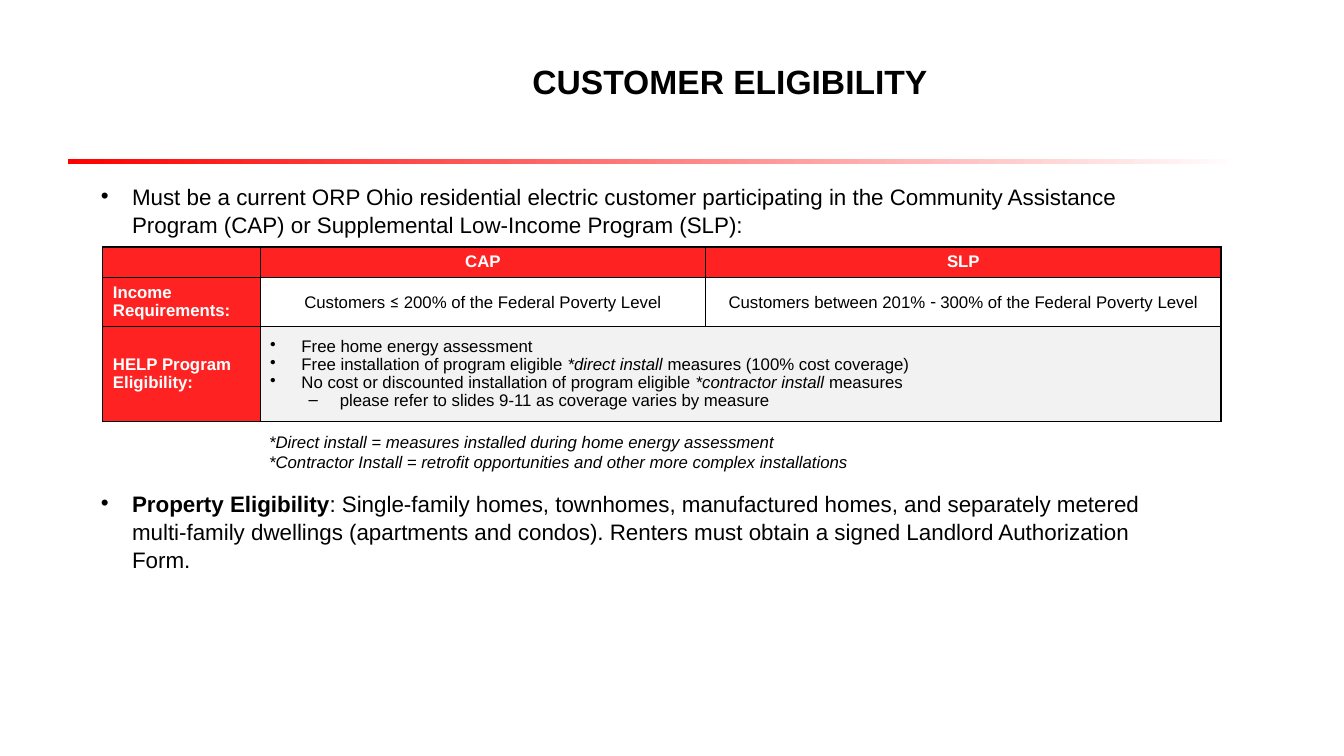
from dataclasses import dataclass
from typing import Optional

from lxml import etree
from pptx import Presentation
from pptx.dml.color import RGBColor
from pptx.enum import shapes, text
from pptx.oxml import ns
from pptx.util import Inches, Pt


@dataclass(frozen=True)
class Theme:
    font: str = "Arial"
    sign: str = "Calibri"
    black: str = "000000"
    white: str = "FFFFFF"
    rule: str = "FF0000"
    red: str = "FF2222"
    gray: str = "F2F2F2"
    title: float = 24
    body: float = 16
    small: float = 12
    symbol: float = 13.5


@dataclass(frozen=True)
class Run:
    text: str
    bold: bool = False
    italic: bool = False
    font: Optional[str] = None
    size: Optional[float] = None


@dataclass(frozen=True)
class Para:
    runs: tuple[Run, ...]
    mark: str = ""
    left: float = 0
    level: int = 0
    before: float = 0


@dataclass(frozen=True)
class Cell:
    row: int
    col: int
    paras: tuple[Para, ...]
    fill: str
    color: str = "000000"
    center: bool = False


THEME = Theme()
HANG = 0.31
LEFT, CENTER = text.PP_ALIGN.LEFT, text.PP_ALIGN.CENTER
TOP, MIDDLE = text.MSO_ANCHOR.TOP, text.MSO_ANCHOR.MIDDLE


def plain(words: str, **style) -> Para:
    return Para((Run(words, **style),))


def item(*runs: Run, mark: str = "•", left: float = HANG,
         level: int = 0, before: float = 0) -> Para:
    return Para(runs, mark, left, level, before)


def indent(para, mark: str, left: float) -> None:
    """Give a paragraph its hanging indent and bullet sign."""
    props = para._p.get_or_add_pPr()
    props.set("marL", str(Inches(left)))
    props.set("indent", str(Inches(-HANG if mark else 0)))
    tag = "a:buChar" if mark else "a:buNone"
    sign = etree.SubElement(props, ns.qn(tag))
    if mark:
        sign.set("char", mark)


def write(frame, paras: tuple[Para, ...], size: float, color: str = THEME.black,
          align=LEFT, anchor=TOP, line: float = 1) -> None:
    frame.word_wrap = True
    frame.vertical_anchor = anchor
    for n, data in enumerate(paras):
        para = frame.paragraphs[0] if n == 0 else frame.add_paragraph()
        para.level = data.level
        para.alignment = align
        para.line_spacing = line
        para.space_before = Pt(data.before)
        para.space_after = Pt(0)
        indent(para, data.mark, data.left)
        for part in data.runs:
            run = para.add_run()
            run.text = part.text
            font = run.font
            font.name = part.font or THEME.font
            font.size = Pt(part.size or size)
            font.bold, font.italic = part.bold, part.italic
            font.color.rgb = RGBColor.from_string(color)


def place(shape, *box: float) -> None:
    shape.left, shape.top, shape.width, shape.height = map(Inches, box)


def rule(slide) -> None:
    """Draw the fading line under the title."""
    bar = slide.shapes.add_shape(
        shapes.MSO_SHAPE.RECTANGLE, *map(Inches, (0.67, 1.58, 11.67, 0.05)))
    bar.shadow.inherit = False
    bar.line.fill.background()
    bar.fill.gradient()
    bar.fill.gradient_angle = 0
    for stop, color in zip(bar.fill.gradient_stops, (THEME.rule, THEME.white)):
        stop.color.rgb = RGBColor.from_string(color)


def border(cell) -> None:
    props = cell._tc.get_or_add_tcPr()
    for n, side in enumerate(("lnL", "lnR", "lnT", "lnB")):
        edge = etree.Element(ns.qn(f"a:{side}"), w=str(Pt(1)))
        fill = etree.SubElement(edge, ns.qn("a:solidFill"))
        etree.SubElement(fill, ns.qn("a:srgbClr"), val=THEME.black)
        props.insert(n, edge)


def grid(slide, cells: tuple[Cell, ...]) -> None:
    cols, rows = (1.56, 4.42, 5.11), (0.3, 0.48, 0.95)
    box = map(Inches, (1.02, 2.45, sum(cols), sum(rows)))
    table = slide.shapes.add_table(len(rows), len(cols), *box).table
    for col, width in zip(table.columns, cols):
        col.width = Inches(width)
    for row, height in zip(table.rows, rows):
        row.height = Inches(height)
    table.cell(2, 1).merge(table.cell(2, 2))
    for cell in table.iter_cells():
        cell.margin_top = cell.margin_bottom = 0
        border(cell)
    for data in cells:
        cell = table.cell(data.row, data.col)
        cell.fill.solid()
        cell.fill.fore_color.rgb = RGBColor.from_string(data.fill)
        cell.vertical_anchor = MIDDLE
        write(cell.text_frame, data.paras, THEME.small, data.color,
              CENTER if data.center else LEFT, MIDDLE, 0.97)


def head(row: int, col: int, words: str) -> Cell:
    paras = (plain(words, bold=True),) if words else ()
    return Cell(row, col, paras, THEME.red, THEME.white, row == 0)


def income(col: int, start: str, sign: str) -> Cell:
    runs = (Run(start), Run(sign, font=THEME.sign, size=THEME.symbol),
            Run(f"{'200%' if col == 1 else '300%'} of the Federal Poverty Level"))
    return Cell(1, col, (Para(runs),), THEME.white, center=True)


HELP = (
    item(Run("Free home energy assessment")),
    item(Run("Free installation of program eligible "),
         Run("*direct install ", italic=True),
         Run("measures (100% cost coverage)")),
    item(Run("No cost or discounted installation of program eligible "),
         Run("*contractor install ", italic=True), Run("measures")),
    item(Run("please refer to slides 9-11 as coverage varies by measure"),
         mark="–", left=0.69, level=1),
)
CELLS = (
    head(0, 0, ""), head(0, 1, "CAP"), head(0, 2, "SLP"),
    head(1, 0, "Income Requirements:"),
    income(1, "Customers ", "≤ "),
    income(2, "Customers between 201% ", "- "),
    head(2, 0, "HELP Program Eligibility:"),
    Cell(2, 1, HELP, THEME.gray),
)
BODY = (
    item(Run("Must be a current ORP Ohio residential electric customer "
             "participating in the Community Assistance Program (CAP) or "
             "Supplemental Low-Income Program (SLP):")),
    item(Run("Property Eligibility", bold=True),
         Run(": Single-family homes, townhomes, manufactured homes, and "
             "separately metered multi-family dwellings (apartments and "
             "condos). Renters must obtain a signed Landlord Authorization "
             "Form."), before=179),
)
NOTES = (
    plain("*Direct install = measures installed during home energy assessment",
          italic=True),
    plain("*Contractor Install = retrofit opportunities and other more "
          "complex installations", italic=True),
)


def main() -> None:
    deck = Presentation()
    deck.slide_width, deck.slide_height = Inches(13.33), Inches(7.5)
    slide = deck.slides.add_slide(deck.slide_layouts[1])
    title, body = slide.placeholders
    place(title, 2.57, 0.6, 9.34, 0.76)
    place(body, 0.9, 1.75, 11.01, 5.33)
    for shape in (title, body):
        shape.text_frame.auto_size = text.MSO_AUTO_SIZE.NONE
    title.text_frame.margin_top = title.text_frame.margin_bottom = 0
    write(title.text_frame, (plain("CUSTOMER ELIGIBILITY", bold=True),),
          THEME.title, align=CENTER)
    write(body.text_frame, BODY, THEME.body, line=1.05)
    rule(slide)
    grid(slide, CELLS)
    notes = slide.shapes.add_textbox(*map(Inches, (2.57, 4.23, 6.46, 0.5)))
    write(notes.text_frame, NOTES, THEME.small)
    deck.save("out.pptx")


if __name__ == "__main__":
    main()
